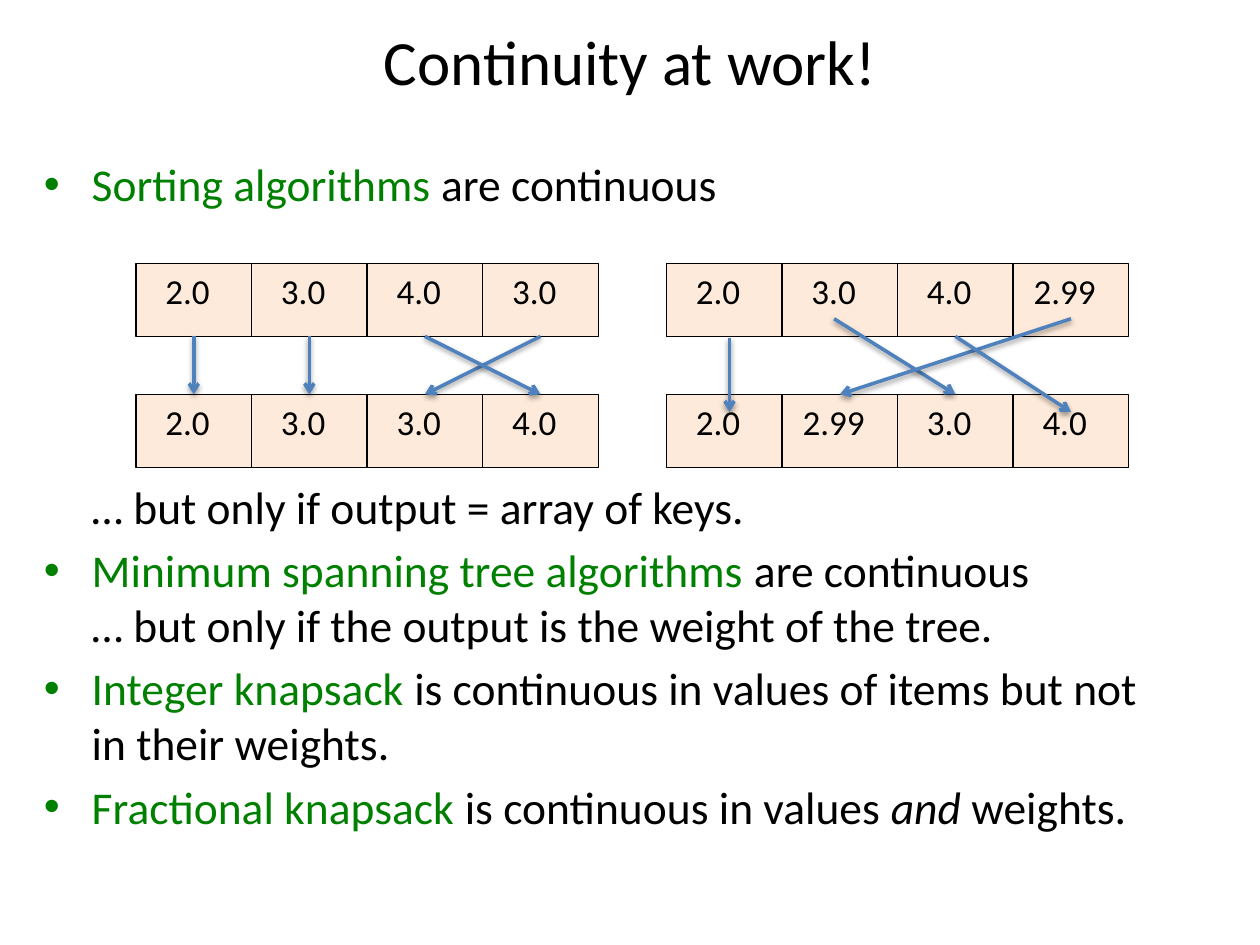
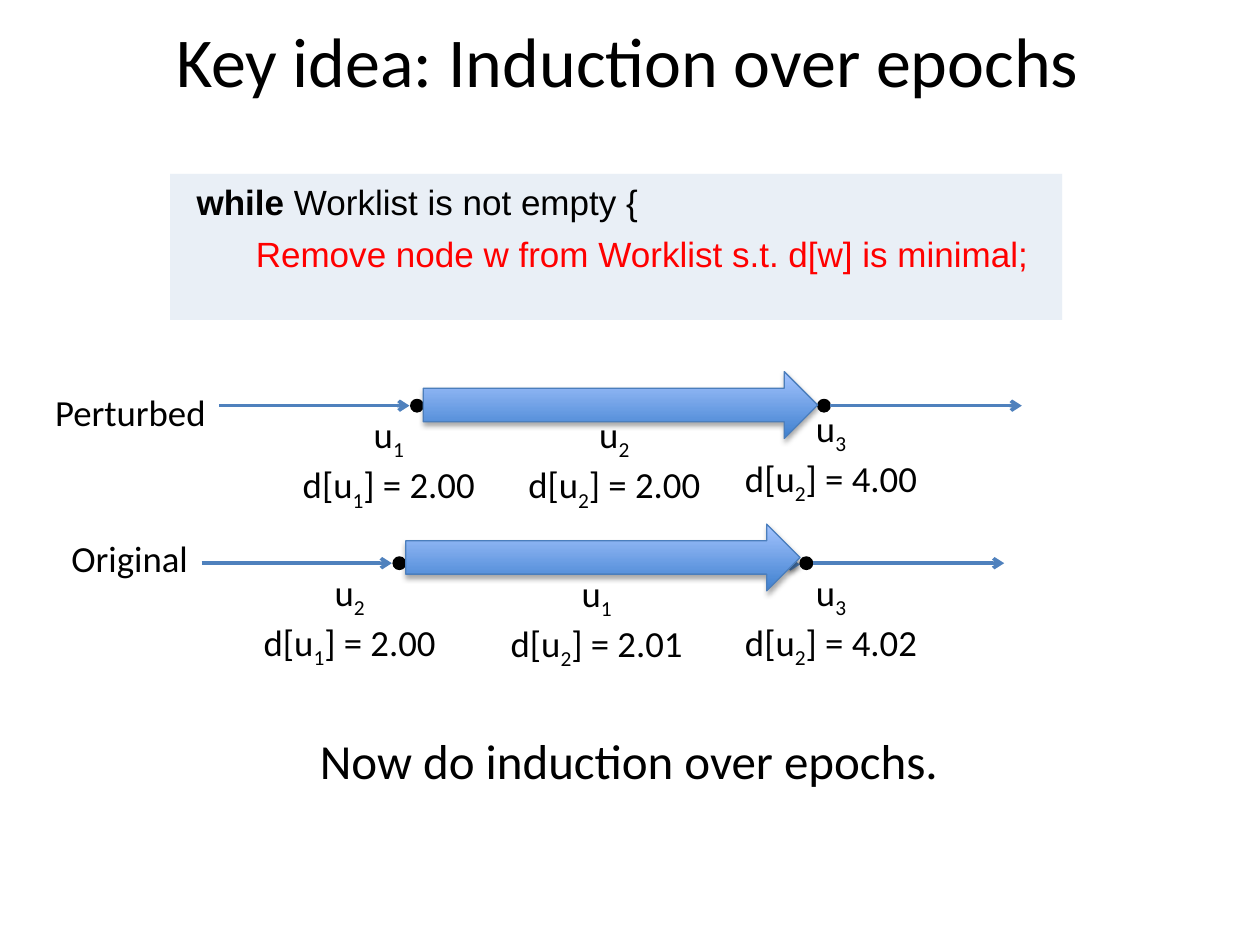
from lxml.etree import SubElement
from pptx import Presentation
from pptx.dml.color import RGBColor
from pptx.enum.shapes import MSO_CONNECTOR, MSO_SHAPE
from pptx.enum.text import MSO_ANCHOR, PP_ALIGN
from pptx.oxml.ns import qn
from pptx.util import Inches, Pt

COLORS = {
    "ink": "000000",
    "topic": "008000",
    "alert": "FF0000",
    "cell": "FDEADA",
    "code": "DCE6F2",
    "arrow": "4F81BD",
    "block_edge": "4B7EBC",
    "block_dark": "3F80CE",
    "block_light": "A4C4FF",
}
CELL_WIDTH = 0.917
CELL_HEIGHT = 0.58
INPUT_TOP = 2.09
OUTPUT_TOP = 3.13
DOT = 0.1


def color(name):
    return RGBColor.from_string(COLORS[name])


def add_slide(prs, title, size, left=0.5):
    slide = prs.slides.add_slide(prs.slide_layouts[5])
    heading = slide.shapes.title
    heading.left, heading.top = Inches(left), Inches(0)
    heading.width, heading.height = Inches(9), Inches(0.95)
    frame = heading.text_frame
    frame.text = title
    frame.vertical_anchor = MSO_ANCHOR.MIDDLE
    style(frame.paragraphs[0], size, align=PP_ALIGN.CENTER)
    return slide


def style(paragraph, size, font="Calibri", ink="ink", align=PP_ALIGN.LEFT):
    paragraph.alignment = align
    paragraph.font.size = Pt(size)
    paragraph.font.name = font
    paragraph.font.color.rgb = color(ink)


def next_paragraph(frame):
    first = frame.paragraphs[0]
    return frame.add_paragraph() if first.runs else first


def add_run(paragraph, text, ink=None, bold=None, italic=None):
    run = paragraph.add_run()
    run.text = text
    run.font.bold, run.font.italic = bold, italic
    if ink:
        run.font.color.rgb = color(ink)
    return run


def add_text_box(slide, left, top, width, height, wrap=True):
    box = slide.shapes.add_textbox(
        Inches(left), Inches(top), Inches(width), Inches(height))
    box.text_frame.word_wrap = wrap
    return box.text_frame


def add_text(slide, text, left, top, width, height, size, align=PP_ALIGN.LEFT):
    frame = add_text_box(slide, left, top, width, height, wrap=False)
    paragraph = frame.paragraphs[0]
    add_run(paragraph, text)
    style(paragraph, size, align=align)


def indent(paragraph, left, hanging=0):
    properties = paragraph._p.get_or_add_pPr()
    properties.set("marL", str(Inches(left)))
    properties.set("indent", str(-Inches(hanging)))
    return properties


def add_bullet(frame, topic, rest, emphasis="", ending=""):
    paragraph = next_paragraph(frame)
    properties = indent(paragraph, 0.38, 0.38)
    SubElement(properties, qn("a:buFont"), typeface="Arial")
    SubElement(properties, qn("a:buChar"), char="•")
    paragraph.space_before = Pt(5.2)
    add_run(paragraph, topic, "topic")
    add_run(paragraph, rest)
    if emphasis:
        add_run(paragraph, emphasis, italic=True)
        add_run(paragraph, ending)
    style(paragraph, 26)


def add_condition(frame, text):
    paragraph = next_paragraph(frame)
    indent(paragraph, 0.38)
    add_run(paragraph, text)
    style(paragraph, 26)


def add_effects(shape, shadow_alpha=None, distance=1.6):
    effects = SubElement(shape._element.spPr, qn("a:effectLst"))
    if shadow_alpha:
        shadow = SubElement(
            effects, qn("a:outerShdw"), blurRad=str(Pt(3.1)),
            dist=str(Pt(distance)), dir="5400000", rotWithShape="0")
        shade = SubElement(shadow, qn("a:srgbClr"), val=COLORS["ink"])
        SubElement(shade, qn("a:alpha"), val=str(shadow_alpha * 1000))


def add_arrow(slide, start, end, shadow_alpha=38):
    arrow = slide.shapes.add_connector(
        MSO_CONNECTOR.STRAIGHT, *map(Inches, (*start, *end)))
    arrow.line.color.rgb = color("arrow")
    arrow.line.width = Pt(2)
    SubElement(arrow.line._get_or_add_ln(), qn("a:tailEnd"), type="arrow")
    add_effects(arrow, shadow_alpha)
    return arrow


def add_solid(slide, kind, left, top, width, height, fill, outlined=True):
    shape = slide.shapes.add_shape(
        kind, Inches(left), Inches(top), Inches(width), Inches(height))
    shape.shadow.inherit = False
    shape.fill.solid()
    shape.fill.fore_color.rgb = color(fill)
    if outlined:
        shape.line.color.rgb = color("ink")
        shape.line.width = Pt(0.75)
    else:
        shape.line.fill.background()
    return shape


def add_array(slide, left, top, keys):
    cells = []
    for index, key in enumerate(keys):
        cell = add_solid(slide, MSO_SHAPE.RECTANGLE, left + index * CELL_WIDTH,
                         top, CELL_WIDTH, CELL_HEIGHT, "cell")
        frame = cell.text_frame
        frame.margin_left, frame.margin_right = Inches(0), Inches(0.1)
        frame.vertical_anchor = MSO_ANCHOR.TOP
        add_run(frame.paragraphs[0], key)
        style(frame.paragraphs[0], 20, align=PP_ALIGN.CENTER)
        cells.append(cell)
    return cells


def add_sorting(slide, left, inputs, outputs, moves):
    sources = add_array(slide, left, INPUT_TOP, inputs)
    targets = add_array(slide, left, OUTPUT_TOP, outputs)
    for start, end in moves:
        loose_start = start if isinstance(start, tuple) else (0, 0)
        loose_end = end if isinstance(end, tuple) else (0, 0)
        arrow = add_arrow(slide, loose_start, loose_end)
        if start is not loose_start:
            arrow.begin_connect(sources[start], 2)
        if end is not loose_end:
            arrow.end_connect(targets[end], 0)


def add_code(slide):
    panel = add_solid(slide, MSO_SHAPE.RECTANGLE, 1.35, 1.38, 7.08, 1.16,
                      "code", outlined=False)
    shade = panel._element.spPr.find(".//" + qn("a:srgbClr"))
    SubElement(shade, qn("a:alpha"), val="62000")
    frame = panel.text_frame
    frame.margin_left = Inches(0.21)
    frame.vertical_anchor = MSO_ANCHOR.TOP
    loop = next_paragraph(frame)
    add_run(loop, "while ", bold=True)
    add_run(loop, "Worklist is not empty {")
    removal = next_paragraph(frame)
    indent(removal, 0.47)
    add_run(removal, "Remove node w from Worklist s.t. d[w] is minimal;")
    for line, ink in ((loop, "ink"), (removal, "alert")):
        line.space_after = Pt(6)
        style(line, 20, "Arial", ink)


def add_node_label(slide, left, top, node, source, distance):
    frame = add_text_box(slide, left, top, 1.59, 0.81, wrap=False)
    for before, subscript, after in (("u", node, ""),
                                     ("d[u", source, f"] = {distance}")):
        paragraph = next_paragraph(frame)
        add_run(paragraph, before)
        lowered = add_run(paragraph, subscript)
        lowered._r.get_or_add_rPr().set("baseline", "-25000")
        if after:
            add_run(paragraph, after)
        style(paragraph, 21, align=PP_ALIGN.CENTER)


def add_epoch(slide, start, axis, block_top):
    length = 3.13
    end = start + length
    add_arrow(slide, (start - 1.62, axis), (start - 0.11, axis), None)
    for dot_left in (start - DOT, end):
        add_solid(slide, MSO_SHAPE.OVAL, dot_left, axis - DOT / 2, DOT, DOT, "ink")
    block = slide.shapes.add_shape(
        MSO_SHAPE.RIGHT_ARROW, Inches(start), Inches(block_top),
        Inches(length), Inches(0.53))
    block.fill.gradient()
    block.fill.gradient_angle = 90
    for stop, position, name in zip(block.fill.gradient_stops, (0, 1),
                                    ("block_dark", "block_light")):
        stop.position = position
        stop.color.rgb = color(name)
    block.line.color.rgb = color("block_edge")
    block.line.width = Pt(0.75)
    add_effects(block, 35, 1.8)
    add_arrow(slide, (end + DOT, axis), (end + 1.62, axis), None)


def build_continuity(prs):
    slide = add_slide(prs, "Continuity at work!", 36)
    sorting = add_text_box(slide, 0.25, 1.19, 9, 0.54)
    add_bullet(sorting, "Sorting algorithms", " are continuous")
    results = add_text_box(slide, 0.25, 3.75, 9, 3)
    add_condition(results, "… but only if output = array of keys.")
    add_bullet(results, "Minimum spanning tree algorithms ", "are continuous")
    add_condition(results, "… but only if the output is the weight of the tree.")
    add_bullet(results, "Integer knapsack ",
               "is continuous in values of items but not in their weights.")
    add_bullet(results, "Fractional knapsack ", "is continuous in values ",
               "and", " weights.")
    add_sorting(slide, 1.08, ("2.0", "3.0", "4.0", "3.0"),
                ("2.0", "3.0", "3.0", "4.0"),
                ((0, 0), (1, 1), (3, 2), (2, 3)))
    add_sorting(slide, 5.29, ("2.0", "3.0", "4.0", "2.99"),
                ("2.0", "2.99", "3.0", "4.0"),
                (((5.79, 2.68), (5.79, 3.27)), ((6.62, 2.53), 2),
                 ((8.5, 2.53), 1), (2, (8.5, 3.27))))


def build_induction(prs):
    slide = add_slide(prs, "Key idea: Induction over epochs", 40, left=0.48)
    add_code(slide)
    for left, top, node, source, distance in (
            (2.29, 3.22, "1", "1", "2.00"),
            (4.08, 3.22, "2", "2", "2.00"),
            (5.8, 3.17, "3", "2", "4.00"),
            (1.98, 4.47, "2", "1", "2.00"),
            (3.94, 4.48, "1", "2", "2.01"),
            (5.8, 4.47, "3", "2", "4.02")):
        add_node_label(slide, left, top, node, source, distance)
    add_arrow(slide, (4.83, 4.47), (6.35, 4.48))
    add_epoch(slide, 3.36, 3.22, 2.95)
    add_epoch(slide, 3.22, 4.47, 4.16)
    add_text(slide, "Perturbed", 0.33, 3.04, 1.41, 0.45, 21, PP_ALIGN.CENTER)
    add_text(slide, "Original", 0.46, 4.2, 1.14, 0.45, 21, PP_ALIGN.CENTER)
    add_text(slide, "Now do induction over epochs.", 2.44, 5.75, 5.67, 1.08, 28)


def main():
    prs = Presentation()
    prs.slide_width, prs.slide_height = Inches(10), Inches(7.5)
    build_continuity(prs)
    build_induction(prs)
    prs.save("out.pptx")


if __name__ == "__main__":
    main()
